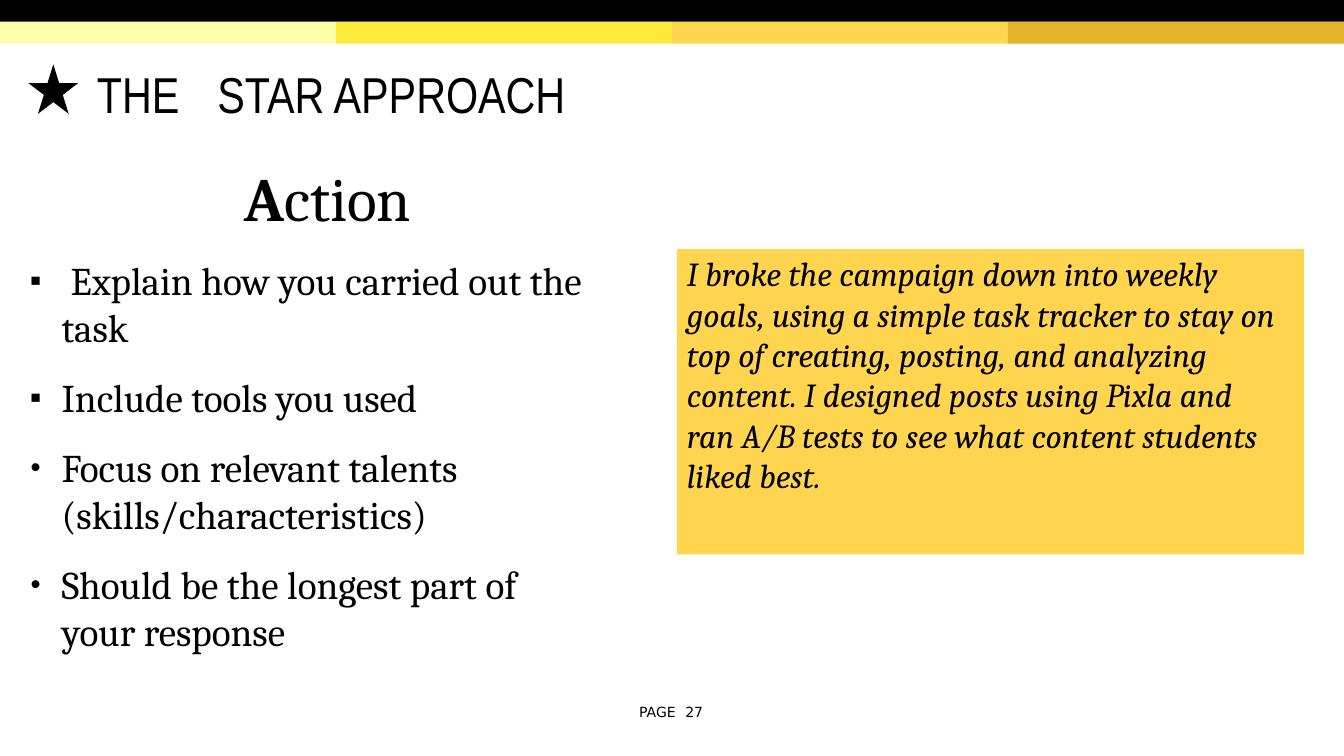
"""Build the slide on the Action step of the STAR approach."""
from lxml import etree
from pptx import Presentation
from pptx import util as u
from pptx.dml.color import RGBColor
from pptx.enum import shapes, text
from pptx.oxml.ns import qn

BLACK = RGBColor(0x00, 0x00, 0x00)
GOLD = RGBColor(0xFF, 0xD4, 0x4F)
BANDS = [RGBColor(0xFF, 0xFF, 0xAA), RGBColor(0xFF, 0xEA, 0x3C),
         GOLD, RGBColor(0xE3, 0xB4, 0x29)]
WIDTH, HEIGHT, BAR = u.Cm(33.87), u.Cm(19.05), u.Cm(0.55)
BULLETS = [
    ("▪", "\tExplain how you carried out the task"),
    ("▪", "Include tools you used"),
    ("•", "Focus on relevant talents (skills/characteristics)"),
    ("•", "Should be the longest part of your response"),
]


def add_text(p, words, size=28, font="Cambria", bold=False, italic=False, stops=()):
    if stops:
        tabs = etree.SubElement(p._p.get_or_add_pPr(), qn("a:tabLst"))
        for stop in stops:
            etree.SubElement(tabs, qn("a:tab"), pos=str(u.Cm(stop)), algn="l")
    r = p.add_run()
    r.text = words
    r.font.size, r.font.name = u.Pt(size), font
    r.font.bold, r.font.italic = bold, italic
    r.font.color.rgb = BLACK


def place(sp, left, top, width, height, inset_left=0, inset_top=0, inset_right=0):
    sp.left, sp.top, sp.width, sp.height = map(u.Cm, (left, top, width, height))
    tf = sp.text_frame
    tf.word_wrap = True
    tf.auto_size = text.MSO_AUTO_SIZE.NONE
    tf.vertical_anchor = text.MSO_ANCHOR.TOP
    tf.margin_left, tf.margin_top = u.Cm(inset_left), u.Cm(inset_top)
    tf.margin_right, tf.margin_bottom = u.Cm(inset_right), 0
    tf.paragraphs[0].alignment = text.PP_ALIGN.LEFT
    tf.paragraphs[0].space_before = u.Pt(0)
    return tf


prs = Presentation()
prs.slide_width, prs.slide_height = WIDTH, HEIGHT
s = prs.slides.add_slide(prs.slide_layouts[1])

band = WIDTH // len(BANDS)
blocks = [(shapes.MSO_SHAPE.RECTANGLE, i * band, BAR, band, BAR, color)
          for i, color in enumerate(BANDS)]
blocks += [
    (shapes.MSO_SHAPE.RECTANGLE, 0, 0, WIDTH, BAR, BLACK),
    (shapes.MSO_SHAPE.STAR_5_POINT, u.Cm(0.72), u.Cm(1.62), u.Cm(1.25), u.Cm(1.25), BLACK),
    (shapes.MSO_SHAPE.RECTANGLE, u.Cm(17.06), u.Cm(6.28), u.Cm(15.8), u.Cm(7.69), GOLD),
]
for kind, left, top, width, height, color in blocks:
    sp = s.shapes.add_shape(kind, left, top, width, height)
    sp.shadow.inherit = False
    sp.fill.solid()
    sp.fill.fore_color.rgb = color
    sp.line.fill.background()
example = sp

tf = place(s.shapes.title, 2.4, 1.52, 12.62, 1.57, inset_left=0.04, inset_top=0.06)
add_text(tf.paragraphs[0], "THE\tSTAR APPROACH", size=36, font="Arial Narrow", stops=[3.04])

tf = place(s.placeholders[1], 0.71, 3.1, 15.01, 13.44, inset_top=0.93)
p = tf.paragraphs[0]
p.alignment = text.PP_ALIGN.CENTER
pPr = p._p.get_or_add_pPr()
pPr.set("marL", str(u.Cm(0.08)))
pPr.set("indent", "0")
etree.SubElement(pPr, qn("a:buNone"))
add_text(p, "A", size=44, bold=True)
add_text(p, "ction", size=44)
for mark, words in BULLETS:
    p = tf.add_paragraph()
    p.space_before = u.Pt(16.3)
    pPr = p._p.get_or_add_pPr()
    pPr.set("marL", str(u.Cm(0.84)))
    pPr.set("marR", str(u.Cm(1)))
    pPr.set("indent", str(u.Cm(-0.8)))
    etree.SubElement(pPr, qn("a:buSzPct"), val="84000")
    etree.SubElement(pPr, qn("a:buFont"), typeface="Times New Roman")
    etree.SubElement(pPr, qn("a:buChar"), char=mark)
    add_text(p, words, stops=[0.84, 1.07])

tf = place(example, 17.06, 6.28, 15.8, 7.69,
           inset_left=0.25, inset_top=0.1, inset_right=0.5)
add_text(tf.paragraphs[0], "I broke the campaign down into weekly goals, using a simple "
         "task tracker to stay on top of creating, posting, and analyzing content. "
         "I designed posts using Pixla and ran A/B tests to see what content "
         "students liked best.", size=24, italic=True)

sp = s.shapes.add_textbox(0, 0, 0, 0)
tf = place(sp, 16.08, 17.7, 1.83, 0.51, inset_left=0.03, inset_top=0.03)
add_text(tf.paragraphs[0], "PAGE\t27", size=10, font="DejaVu Sans", stops=[1.16])

prs.save("out.pptx")
